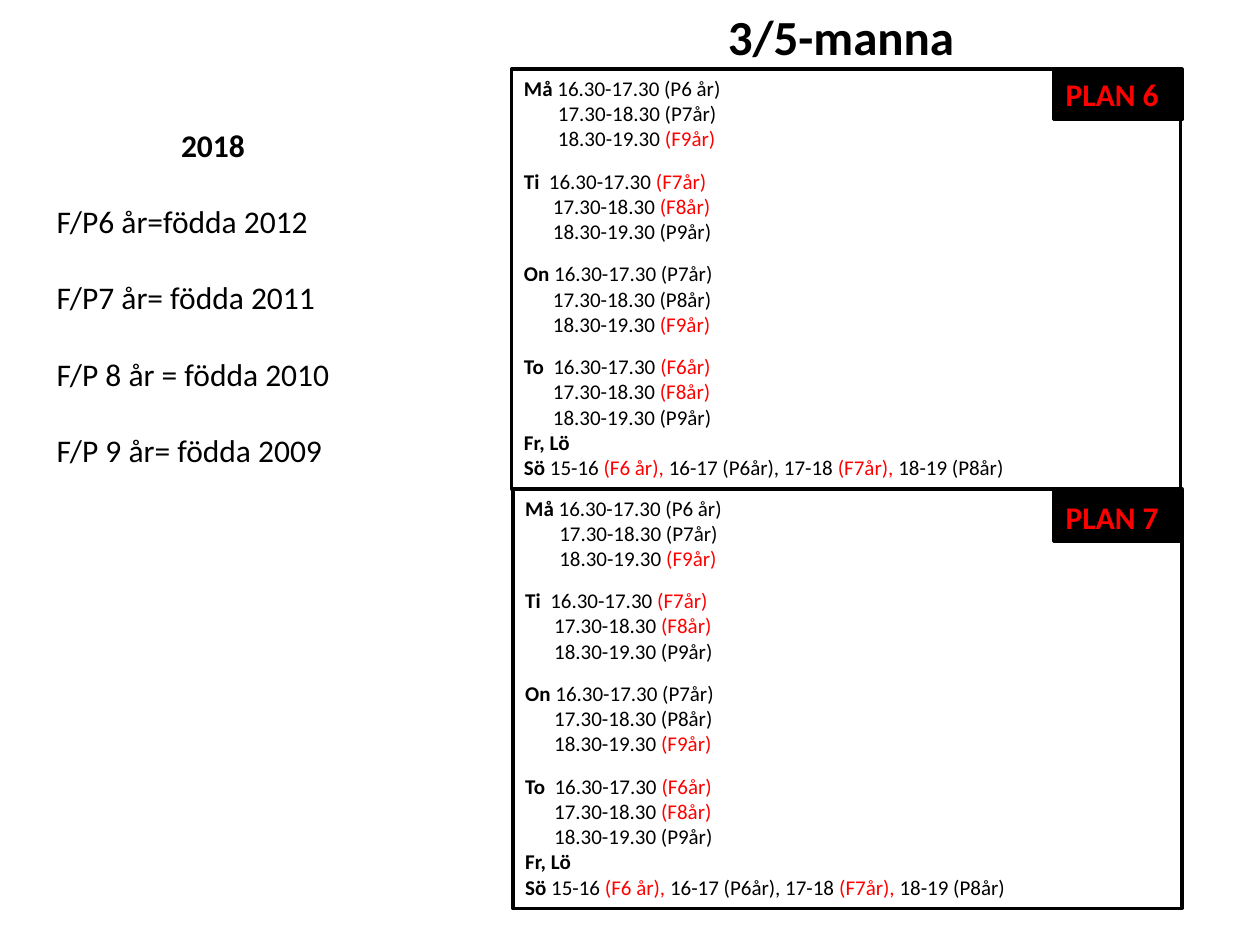
from pptx import Presentation
from pptx.dml.color import RGBColor
from pptx.enum.shapes import MSO_SHAPE
from pptx.enum.text import MSO_ANCHOR, MSO_AUTO_SIZE, PP_ALIGN
from pptx.util import Inches, Pt

BLACK, WHITE, RED = "000000", "FFFFFF", "FF0000"
FONT = "Calibri"
HOURS = ["16.30-17.30", "17.30-18.30", "18.30-19.30"]
DAYS = [
    ("Må ", 0.27, ["(P6 år)", "(P7år)", "(F9år)"]),
    ("Ti  ", 0.23, ["(F7år)", "(F8år)", "(P9år)"]),
    ("On ", 0.23, ["(P7år)", "(P8år)", "(F9år)"]),
    ("To  ", 0.23, ["(F6år)", "(F8år)", "(P9år)"]),
]
SUNDAY = [("15-16 ", "(F6 år), "), ("16-17 ", "(P6år), "),
          ("17-18 ", "(F7år), "), ("18-19 ", "(P8år)")]
BIRTH_YEARS = ["F/P6 år=födda 2012", "F/P7 år= födda 2011",
               "F/P 8 år = födda 2010", "F/P 9 år= födda 2009"]


def rgb(color):
    return RGBColor.from_string(color)


def set_font(font, size, color=BLACK, bold=False):
    font.name = FONT
    font.size = Pt(size)
    font.bold = bold
    font.color.rgb = rgb(color)


def prepare_frame(sp):
    tf = sp.text_frame
    tf.word_wrap = True
    tf.auto_size = MSO_AUTO_SIZE.SHAPE_TO_FIT_TEXT
    tf.vertical_anchor = MSO_ANCHOR.TOP
    return tf


def add_box(slide, left, top, width, height, fill):
    sp = slide.shapes.add_shape(MSO_SHAPE.RECTANGLE, Inches(left), Inches(top),
                                Inches(width), Inches(height))
    sp.shadow.inherit = False
    sp.fill.solid()
    sp.fill.fore_color.rgb = rgb(fill)
    sp.line.color.rgb = rgb(BLACK)
    sp.line.width = Pt(2)
    return prepare_frame(sp)


def add_text(slide, left, top, width, height):
    return prepare_frame(slide.shapes.add_textbox(
        Inches(left), Inches(top), Inches(width), Inches(height)))


def add_paragraph(tf, align=PP_ALIGN.LEFT, before=0, indent=0):
    p = tf.add_paragraph() if tf.text else tf.paragraphs[0]
    p.alignment = align
    p.space_before = Pt(before)
    if indent:
        p._p.get_or_add_pPr().set("marL", str(Inches(indent)))
    return p


def add_line(tf, text, size, color=BLACK, bold=False, **layout):
    p = add_paragraph(tf, **layout)
    p.text = text
    set_font(p.font, size, color, bold)


def add_run(p, text, color=BLACK, bold=False):
    r = p.add_run()
    r.text = text
    set_font(r.font, 12, color, bold)


def add_slot(p, hours, group):
    add_run(p, hours)
    add_run(p, group, RED if group.startswith("(F") else BLACK)


def add_schedule(slide, left, top):
    tf = add_box(slide, left, top, 5.31, 3.33, WHITE)
    for day, indent, groups in DAYS:
        for i, (hours, group) in enumerate(zip(HOURS, groups)):
            first = i == 0
            p = add_paragraph(tf, before=9.8 if first and tf.text else 0,
                              indent=0 if first else indent)
            if first:
                add_run(p, day, bold=True)
            add_slot(p, hours + " ", group)
    add_line(tf, "Fr, Lö", 12, bold=True)
    p = add_paragraph(tf)
    add_run(p, "Sö ", bold=True)
    for hours, group in SUNDAY:
        add_slot(p, hours, group)


def add_plan_label(slide, top, text):
    tf = add_box(slide, 8.36, top, 1.02, 0.4, BLACK)
    add_line(tf, text, 18, RED, True)


def add_birth_years(slide):
    tf = add_text(slide, 0.35, 0.95, 2.68, 2.83)
    add_line(tf, "2018", 18, bold=True, align=PP_ALIGN.CENTER)
    for text in BIRTH_YEARS:
        add_line(tf, text, 18, before=22)


def main():
    prs = Presentation()
    prs.slide_width, prs.slide_height = Inches(10), Inches(7.5)
    slide = prs.slides.add_slide(prs.slide_layouts[6])
    add_schedule(slide, 4.06, 0.55)
    title = add_text(slide, 4.06, 0, 5.23, 0.57)
    add_line(title, "3/5-manna", 28, bold=True, align=PP_ALIGN.CENTER)
    add_schedule(slide, 4.07, 3.88)
    add_plan_label(slide, 0.55, "PLAN 6")
    add_plan_label(slide, 3.9, "PLAN 7")
    add_birth_years(slide)
    prs.save("out.pptx")


if __name__ == "__main__":
    main()
